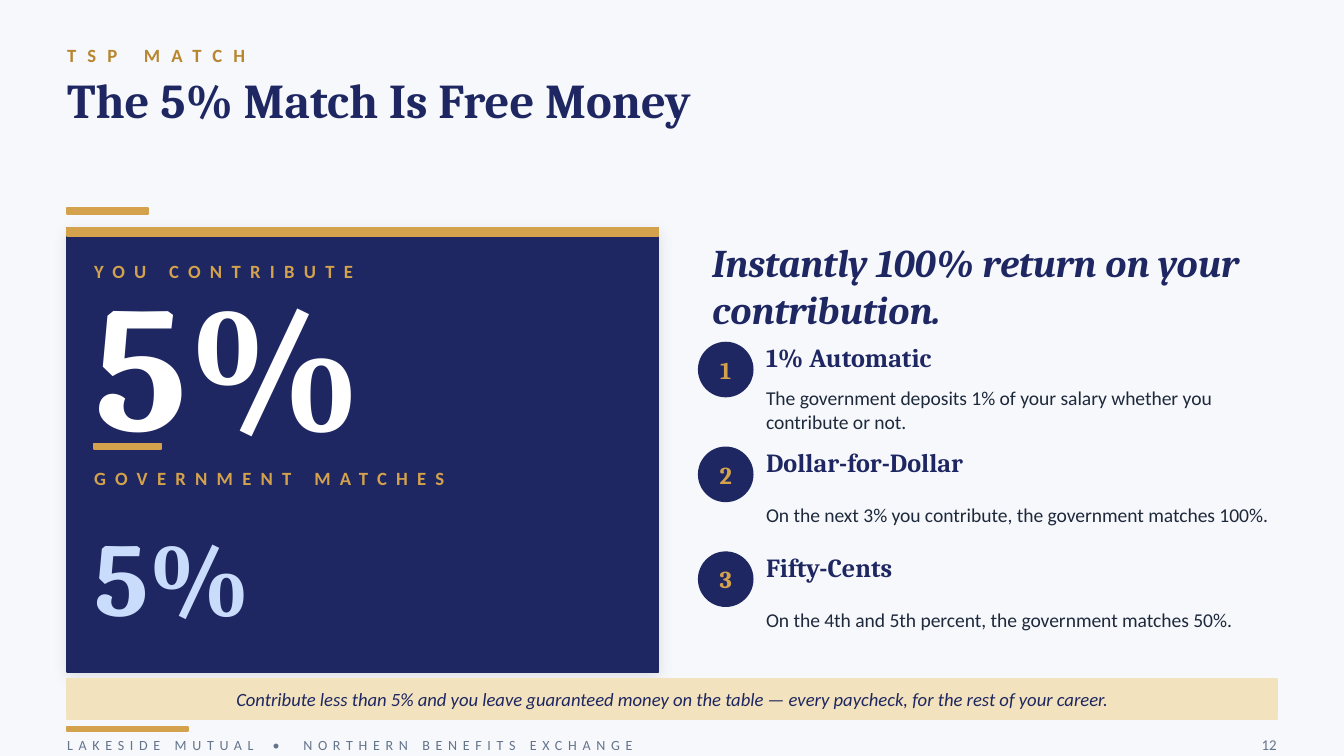
from lxml import etree
from pptx import Presentation, util as u
from pptx.dml.color import RGBColor
from pptx.enum import shapes, text
from pptx.oxml import ns

WIDTH = 10
HEIGHT = WIDTH * 9 / 16
MARGIN = WIDTH * 0.05
CONTENT = WIDTH - 2 * MARGIN
NAVY, GOLD, OCHRE, SAND = "1E2761", "D4A24C", "B8862E", "F2E2BD"
PAPER, WHITE, ICE, INK, SLATE = "F6F8FC", "FFFFFF", "CADCFC", "1E293B", "64748B"
SERIF, SANS = "Cambria", "Calibri"
LEFT, CENTER, RIGHT = text.PP_ALIGN.LEFT, text.PP_ALIGN.CENTER, text.PP_ALIGN.RIGHT
TOP, MIDDLE = text.MSO_ANCHOR.TOP, text.MSO_ANCHOR.MIDDLE
RECT, OVAL = shapes.MSO_SHAPE.RECTANGLE, shapes.MSO_SHAPE.OVAL

EYEBROW = "TSP MATCH"
TITLE = "The 5% Match Is Free Money"
HEADLINE = "Instantly 100% return on your contribution."
SHARES = [
    ("YOU CONTRIBUTE", 1.88, "5%", 2.15, 1.05, 96, WHITE),
    ("GOVERNMENT MATCHES", 3.42, "5%", 3.7, 1.15, 56, ICE),
]
STEPS = [
    ("1% Automatic", "The government deposits 1% of your salary whether you contribute or not."),
    ("Dollar-for-Dollar", "On the next 3% you contribute, the government matches 100%."),
    ("Fifty-Cents", "On the 4th and 5th percent, the government matches 50%."),
]
TAKEAWAY = ("Contribute less than 5% and you leave guaranteed money on the table"
            " — every paycheck, for the rest of your career.")
FOOTER = [("LAKESIDE MUTUAL", 3), (" • ", 5.5), ("NORTHERN BENEFITS EXCHANGE", 3)]
PAGE_NUMBER = "12"

deck = Presentation()
deck.slide_width, deck.slide_height = u.Inches(WIDTH), u.Inches(HEIGHT)
page = deck.slides.add_slide(deck.slide_layouts[6])


def color(value):
    return RGBColor.from_string(value)


def inches(*lengths):
    return [u.Inches(length) for length in lengths]


def add_block(left, top, width, height, fill, kind=RECT):
    shape = page.shapes.add_shape(kind, *inches(left, top, width, height))
    shape.shadow.inherit = False
    shape.fill.solid()
    shape.fill.fore_color.rgb = color(fill)
    shape.line.color.rgb = color(fill)
    shape.line.width = u.Pt(1)
    return shape


def add_soft_shadow(shape):
    effects = shape._element.spPr.find(ns.qn("a:effectLst"))
    shadow = etree.SubElement(effects, ns.qn("a:outerShdw"), blurRad=str(u.Pt(8)),
                              dist=str(u.Pt(2)), dir="5400000", rotWithShape="0")
    black = etree.SubElement(shadow, ns.qn("a:srgbClr"), val="000000")
    etree.SubElement(black, ns.qn("a:alpha"), val="10000")


def add_text(left, top, width, height, content, size, font, ink, bold=False,
             italic=False, align=LEFT, anchor=MIDDLE, spacing=0, inset=(0, 0)):
    box = page.shapes.add_textbox(*inches(left, top, width, height))
    frame = box.text_frame
    frame.word_wrap = True
    frame.vertical_anchor = anchor
    frame.margin_left = frame.margin_right = u.Inches(inset[0])
    frame.margin_top = frame.margin_bottom = u.Inches(inset[1])
    para = frame.paragraphs[0]
    para.alignment = align
    para.font.name, para.font.size = font, u.Pt(size)
    para.font.bold, para.font.italic = bold, italic
    para.font.color.rgb = color(ink)
    spans = [(content, spacing)] if isinstance(content, str) else content
    for words, tracking in spans:
        span = para.add_run()
        span.text = words
        if tracking:
            span._r.get_or_add_rPr().set("spc", str(int(tracking * 100)))


page.background.fill.solid()
page.background.fill.fore_color.rgb = color(PAPER)

add_text(MARGIN, 0.28, CONTENT, 0.26, EYEBROW, 10, SANS, OCHRE, bold=True, spacing=6)
add_text(MARGIN, 0.52, 9.2, 1, TITLE, 26, SERIF, NAVY, bold=True, anchor=TOP)
add_block(MARGIN, 1.55, 0.6, 0.04, GOLD)

panel_top, panel_width = 1.7, 4.4
panel = add_block(MARGIN, panel_top, panel_width, 3.3, NAVY)
add_soft_shadow(panel)
add_block(MARGIN, panel_top, panel_width, 0.06, GOLD)
panel_text = MARGIN + 0.2
panel_text_width = panel_width - 0.4
for label, label_top, amount, amount_top, amount_height, size, ink in SHARES:
    add_text(panel_text, label_top, panel_text_width, 0.28, label, 10, SANS, GOLD,
             bold=True, spacing=5)
    add_text(panel_text, amount_top, panel_text_width, amount_height, amount, size,
             SERIF, ink, bold=True)
add_block(panel_text, 3.3, 0.5, 0.04, GOLD)

column = 5.2
column_width = WIDTH - MARGIN - column
add_text(column, panel_top, column_width, 0.85, HEADLINE, 21, SERIF, NAVY,
         bold=True, italic=True, inset=(0.1, 0.05))

first_step, step_pitch, badge, indent = 2.55, 0.78, 0.4, 0.5
step_text, step_width = column + indent, column_width - indent
for index, (heading, detail) in enumerate(STEPS):
    top = first_step + index * step_pitch
    add_block(column, top, badge, badge, NAVY, OVAL)
    add_text(column, top, badge, badge, str(index + 1), 13, SERIF, GOLD,
             bold=True, align=CENTER)
    add_text(step_text, top - 0.04, step_width, 0.3, heading, 14, SERIF, NAVY, bold=True)
    add_text(step_text, top + 0.25, step_width, 0.5, detail, 10.5, SANS, INK)

add_block(MARGIN, 5.05, CONTENT, 0.3, SAND)
add_text(MARGIN + 0.1, 5.05, CONTENT - 0.2, 0.3, TAKEAWAY, 10, SANS, NAVY,
         italic=True, align=CENTER)

footer_top, footer_height = 5.45, 0.18
add_block(MARGIN, 5.41, 0.9, 0.03, GOLD)
add_text(MARGIN, footer_top, 6, footer_height, FOOTER, 7.5, SANS, SLATE)
add_text(WIDTH - 2 * MARGIN, footer_top, 0.5, footer_height, PAGE_NUMBER, 8, SANS,
         SLATE, align=RIGHT)

deck.save("out.pptx")
